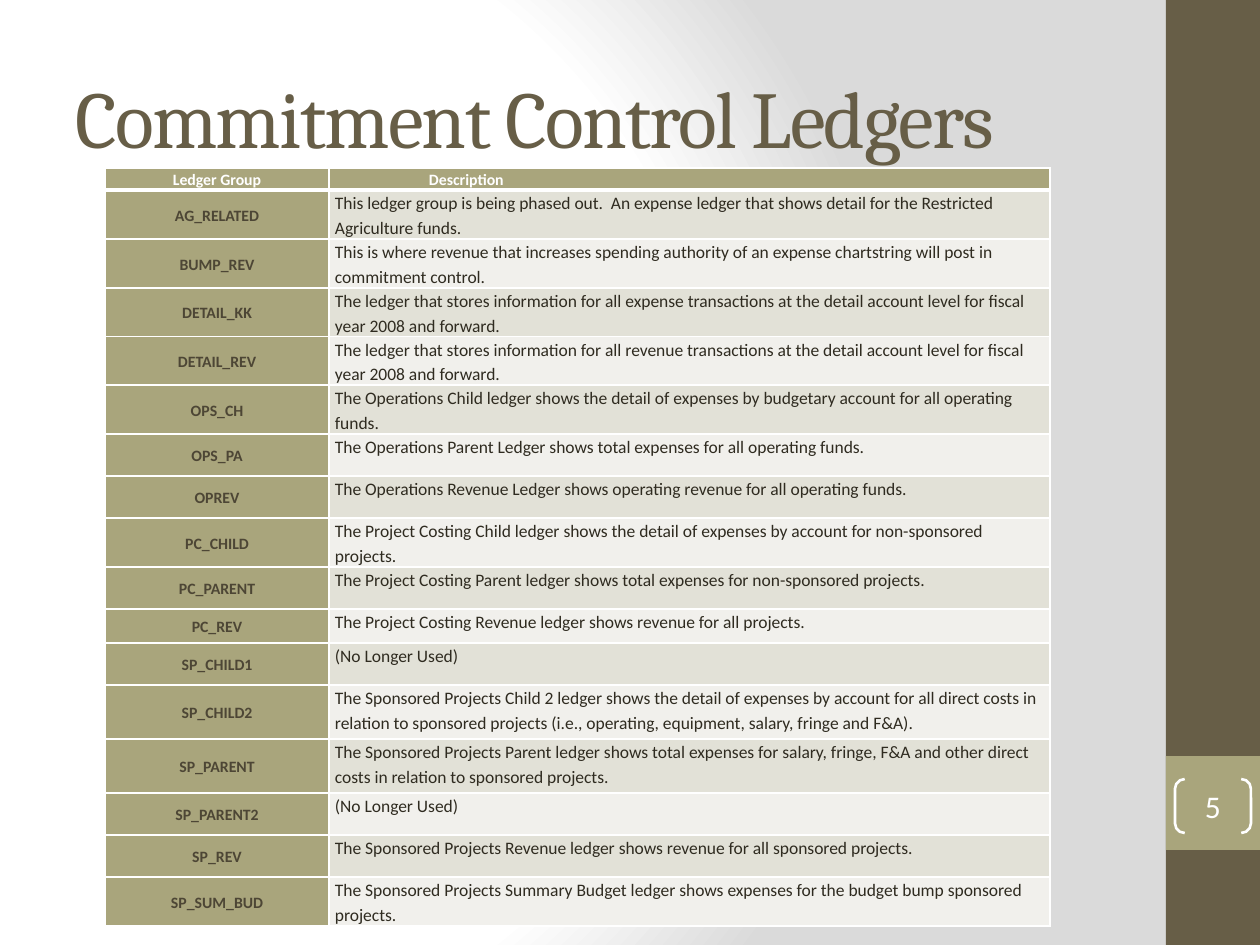
from pptx import Presentation
from pptx.dml.color import RGBColor
from pptx.enum.shapes import MSO_SHAPE
from pptx.enum.text import MSO_ANCHOR, PP_ALIGN
from pptx.oxml import parse_xml
from pptx.oxml.ns import nsdecls, qn
from pptx.util import Pt

RECTANGLE, BRACKETS = MSO_SHAPE.RECTANGLE, MSO_SHAPE.DOUBLE_BRACKET
TOP, MIDDLE = MSO_ANCHOR.TOP, MSO_ANCHOR.MIDDLE
LEFT, CENTER = PP_ALIGN.LEFT, PP_ALIGN.CENTER

PX = 914400 / 126
THEME = {
    "brown": "675E47", "olive": "A9A57C", "white": "FFFFFF", "grey": "DADADA",
    "ledger": "4D4635", "text": "2F2B20", "bands": ("E2E1D7", "F1F0EC"),
    "heading font": "Cambria", "body font": "Calibri",
    "title size": 46, "number size": 18, "label size": 9, "body size": 10,
}

# Ledger group, description, row height in px
LEDGERS = [
    ("AG_RELATED", "This ledger group is being phased out.  An expense ledger that shows "
     "detail for the Restricted Agriculture funds.", 49),
    ("BUMP_REV", "This is where revenue that increases spending authority of an expense "
     "chartstring will post in commitment control.", 49),
    ("DETAIL_KK", "The ledger that stores information for all expense transactions at the "
     "detail account level for fiscal year 2008 and forward.", 48),
    ("DETAIL_REV", "The ledger that stores information for all revenue transactions at the "
     "detail account level for fiscal year 2008 and forward.", 49),
    ("OPS_CH", "The Operations Child ledger shows the detail of expenses by budgetary "
     "account for all operating funds.", 49),
    ("OPS_PA", "The Operations Parent Ledger shows total expenses for all operating funds.", 42),
    ("OPREV", "The Operations Revenue Ledger shows operating revenue for all operating "
     "funds.", 42),
    ("PC_CHILD", "The Project Costing Child ledger shows the detail of expenses by account "
     "for non-sponsored projects.", 49),
    ("PC_PARENT", "The Project Costing Parent ledger shows total expenses for non-sponsored "
     "projects.", 42),
    ("PC_REV", "The Project Costing Revenue ledger shows revenue for all projects.", 34),
    ("SP_CHILD1", "(No Longer Used)", 42),
    ("SP_CHILD2", "The Sponsored Projects Child 2 ledger shows the detail of expenses by "
     "account for all direct costs in relation to sponsored projects (i.e., operating, "
     "equipment, salary, fringe and F&A).", 54),
    ("SP_PARENT", "The Sponsored Projects Parent ledger shows total expenses for salary, "
     "fringe, F&A and other direct costs in relation to sponsored projects.", 54),
    ("SP_PARENT2", "(No Longer Used)", 42),
    ("SP_REV", "The Sponsored Projects Revenue ledger shows revenue for all sponsored "
     "projects.", 42),
    ("SP_SUM_BUD", "The Sponsored Projects Summary Budget ledger shows expenses for the "
     "budget bump sponsored projects.", 49),
]


def px(*lengths):
    """Turn px lengths into a list of EMU."""
    return [round(length * PX) for length in lengths]


def write(frame, text, size, color, align=LEFT, font="body font", bold=False):
    """Fill a text frame with one formatted paragraph and return it."""
    frame.text = text
    para = frame.paragraphs[0]
    para.alignment = align
    style = para.runs[0].font
    style.name, style.size, style.bold = THEME[font], Pt(THEME[size]), bold
    style.color.rgb = RGBColor.from_string(THEME[color])
    return para


deck = Presentation()
deck.slide_width, deck.slide_height = px(1260, 945)
page = deck.slides.add_slide(deck.slide_layouts[6])

# Background: a white glow that fades to grey
page.background.fill.gradient()
gradient = page.element.find(".//" + qn("a:gradFill"))
stops = "".join(
    f'<a:gs pos="{percent * 1000}"><a:srgbClr val="{THEME[color]}"/></a:gs>'
    for percent, color in ((0, "white"), (75, "white"), (100, "grey")))
gradient.getparent().replace(gradient, parse_xml(
    f'<a:gradFill {nsdecls("a")} rotWithShape="1"><a:gsLst>{stops}</a:gsLst>'
    '<a:path path="circle"><a:fillToRect l="20000" t="50000" r="100000" b="50000"/>'
    '</a:path></a:gradFill>'))

# Side bar
for top, height, color in ((0, 945, "brown"), (756, 94, "olive")):
    bar = page.shapes.add_shape(RECTANGLE, *px(1166, top, 94, height))
    bar.shadow.inherit = False
    bar.fill.solid()
    bar.fill.fore_color.rgb = RGBColor.from_string(THEME[color])
    bar.line.fill.background()

# Title
title = page.shapes.add_textbox(*px(63, 38, 1050, 157)).text_frame
title.word_wrap = True
title.vertical_anchor = MIDDLE
heading = write(title, "Commitment Control Ledgers", "title size", "brown",
                font="heading font")
heading.runs[0].font._element.set("spc", "-100")

# Page number
number = page.shapes.add_shape(BRACKETS, *px(1175, 779, 76, 54))
number.shadow.inherit = False
number.adjustments[0] = 0.18
number.fill.background()
number.line.color.rgb = RGBColor.from_string(THEME["white"])
number.line.width = Pt(1.5)
frame = number.text_frame
frame.margin_left = frame.margin_right = frame.margin_top = frame.margin_bottom = 0
frame.vertical_anchor = MIDDLE
write(frame, "5", "number size", "white", CENTER)

# Ledger table
rows = [("Ledger Group", "Description", 22)] + LEDGERS
table_height = sum(height for _, _, height in rows)
table = page.shapes.add_table(len(rows), 2, *px(105, 168, 945, table_height)).table
table.horz_banding = False
table.columns[0].width, table.columns[1].width = px(224, 721)

for index, (group, description, height) in enumerate(rows):
    table.rows[index].height = px(height)[0]
    header = index == 0
    for column, text in enumerate((group, description)):
        cell = table.cell(index, column)
        label = header or column == 0
        cell.margin_left = cell.margin_right = px(6)[0]
        cell.margin_top = cell.margin_bottom = 0
        cell.vertical_anchor = MIDDLE if label and not header else TOP
        para = write(cell.text_frame, text, "label size" if label else "body size",
                     "white" if header else "ledger" if label else "text",
                     CENTER if column == 0 else LEFT, bold=label)
        para.line_spacing = 1.15
        if header and column == 1:
            para._p.get_or_add_pPr().set("marL", str(px(94)[0]))

        properties = cell._tc.get_or_add_tcPr()
        for side in ("L", "R", "T", "B"):
            under_header = (index, side) in ((0, "B"), (1, "T"))
            properties.append(parse_xml(
                f'<a:ln{side} {nsdecls("a")} w="{Pt(3 if under_header else 1)}"><a:solidFill>'
                f'<a:srgbClr val="{THEME["white"]}"/></a:solidFill></a:ln{side}>'))
        cell.fill.solid()
        cell.fill.fore_color.rgb = RGBColor.from_string(
            THEME["olive"] if label else THEME["bands"][(index - 1) % 2])

deck.save("out.pptx")
